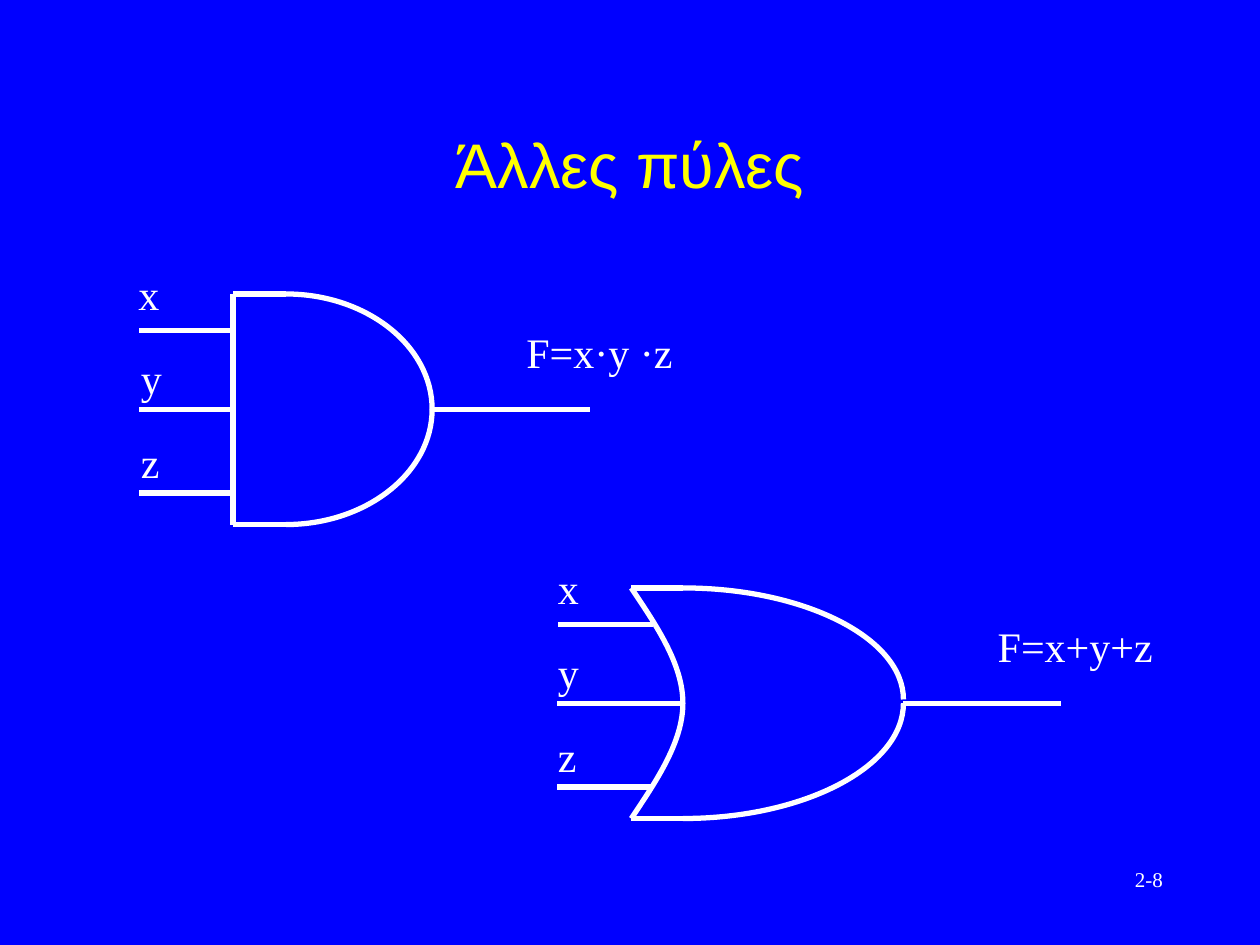
from dataclasses import dataclass

from lxml.etree import SubElement
from pptx import Presentation
from pptx.dml.color import RGBColor
from pptx.enum.shapes import MSO_CONNECTOR
from pptx.enum.text import MSO_ANCHOR, MSO_AUTO_SIZE, PP_ALIGN
from pptx.oxml.ns import qn
from pptx.slide import Slide
from pptx.util import Inches, Pt

Point = tuple[float, float]


@dataclass(frozen=True)
class Theme:
    background: RGBColor = RGBColor(0x00, 0x00, 0xFF)
    ink: RGBColor = RGBColor(0xFF, 0xFF, 0xFF)
    heading: RGBColor = RGBColor(0xFF, 0xFF, 0x00)
    heading_font: str = "Arial"
    body_font: str = "Times New Roman"
    heading_size: Pt = Pt(36)
    label_size: Pt = Pt(24)
    number_size: Pt = Pt(12)
    stroke: Pt = Pt(3)


@dataclass(frozen=True)
class Input:
    name: str
    label_left: float
    label_width: float
    wire_start: float
    wire_end: float


@dataclass(frozen=True)
class Gate:
    top: float
    back: float
    shoulder: float
    tip: float
    tip_gap: float
    concave: bool
    inputs: tuple[Input, ...]
    formula: str
    formula_left: float
    formula_width: float


THEME = Theme()
GATE_TOP = 7 / 3
GATE_HEIGHT = 1.83
OUTPUT_LENGTH = 1.25
WIRE_DROPS = (0.29, GATE_HEIGHT / 2, 1.58)
LABEL_DROP, LABEL_STEP = -0.25, 2 / 3
FORMULA_DROP = 0.21
ARC_HANDLE = 0.55

GATES = (
    Gate(GATE_TOP, 1.85, 2.27, 3.43, 0, False,
         (Input("x", 1, 0.37, 1.1, 1.85),
          Input("y", 1.02, 0.37, 1.1, 1.85),
          Input("z", 1.02, 0.35, 1.1, 1.85)),
         "F=x·y ·z", 4.08, 1.37),
    Gate(2 * GATE_TOP, 5.01, 5.42, 7.17, 0.03, True,
         (Input("x", 4.33, 0.37, 4.43, 5.18),
          Input("y", 4.33, 0.37, 4.42, 5.42),
          Input("z", 4.33, 0.35, 4.42, 5.17)),
         "F=x+y+z", 7.82, 1.43),
)


def draw_line(slide: Slide, start: Point, end: Point) -> None:
    wire = slide.shapes.add_connector(
        MSO_CONNECTOR.STRAIGHT, *(Inches(v) for v in start + end))
    wire.line.color.rgb = THEME.ink
    wire.line.width = THEME.stroke
    SubElement(wire._element.spPr, qn("a:effectLst"))


def draw_curve(slide: Slide, *points: Point) -> None:
    first, *rest = [(Inches(x), Inches(y)) for x, y in points]
    builder = slide.shapes.build_freeform(*first)
    builder.add_line_segments(rest, close=False)
    curve = builder.convert_to_shape()
    curve.shadow.inherit = False
    curve.fill.background()
    curve.line.color.rgb = THEME.ink
    curve.line.width = THEME.stroke
    segments = list(curve._element.iter(qn("a:lnTo")))
    outline = segments[0].getparent()
    for index, segment in enumerate(segments):
        if index % 3 == 0:
            bezier = SubElement(outline, qn("a:cubicBezTo"))
        bezier.append(segment[0])
        outline.remove(segment)


def draw_label(slide: Slide, text: str, left: float, top: float, width: float,
               height: float = 0.5, size: Pt = THEME.label_size) -> None:
    frame = slide.shapes.add_textbox(
        Inches(left), Inches(top), Inches(width), Inches(height)).text_frame
    frame.word_wrap = False
    frame.auto_size = MSO_AUTO_SIZE.SHAPE_TO_FIT_TEXT
    frame.text = text
    font = frame.paragraphs[0].font
    font.name, font.size = THEME.body_font, size
    font.color.rgb = THEME.ink


def draw_title(slide: Slide, text: str) -> None:
    frame = slide.shapes.add_textbox(
        Inches(0.75), Inches(0.67), Inches(8.5), Inches(1.25)).text_frame
    frame.word_wrap = True
    frame.vertical_anchor = MSO_ANCHOR.MIDDLE
    frame.text = text
    heading = frame.paragraphs[0]
    heading.alignment = PP_ALIGN.CENTER
    heading.font.name = THEME.heading_font
    heading.font.size = THEME.heading_size
    heading.font.color.rgb = THEME.heading


def draw_gate(slide: Slide, gate: Gate) -> None:
    bottom = gate.top + GATE_HEIGHT
    middle = gate.top + GATE_HEIGHT / 2
    reach = ARC_HANDLE * (gate.tip - gate.shoulder)
    for edge, end in ((gate.top, middle - gate.tip_gap), (bottom, middle)):
        draw_curve(slide, (gate.shoulder, edge), (gate.shoulder + reach, edge),
                   (gate.tip, end + ARC_HANDLE * (edge - end)),
                   (gate.tip, end))
        draw_line(slide, (gate.shoulder, edge), (gate.back, edge))

    if gate.concave:
        halfway = (gate.back + gate.shoulder) / 2
        sixth = GATE_HEIGHT / 6
        draw_curve(slide, (gate.back, gate.top),
                   (halfway, gate.top + sixth),
                   (gate.shoulder, middle - sixth),
                   (gate.shoulder, middle),
                   (gate.shoulder, middle + sixth),
                   (halfway, bottom - sixth),
                   (gate.back, bottom))
    else:
        draw_line(slide, (gate.back, gate.top), (gate.back, bottom))

    for row, (signal, drop) in enumerate(zip(gate.inputs, WIRE_DROPS)):
        level = gate.top + drop
        draw_line(slide, (signal.wire_end, level), (signal.wire_start, level))
        draw_label(slide, signal.name, signal.label_left,
                   gate.top + LABEL_DROP + row * LABEL_STEP,
                   signal.label_width)

    draw_line(slide, (gate.tip, middle), (gate.tip + OUTPUT_LENGTH, middle))
    draw_label(slide, gate.formula, gate.formula_left,
               gate.top + FORMULA_DROP, gate.formula_width)


def main() -> None:
    deck = Presentation()
    deck.slide_width, deck.slide_height = Inches(10), Inches(7.5)
    slide = deck.slides.add_slide(deck.slide_layouts[6])
    slide.background.fill.solid()
    slide.background.fill.fore_color.rgb = THEME.background
    draw_label(slide, "2-8", 8.91, 6.83, 0.53, 0.3, THEME.number_size)
    draw_title(slide, "Άλλες πύλες")
    for gate in GATES:
        draw_gate(slide, gate)
    deck.save("out.pptx")


if __name__ == "__main__":
    main()
